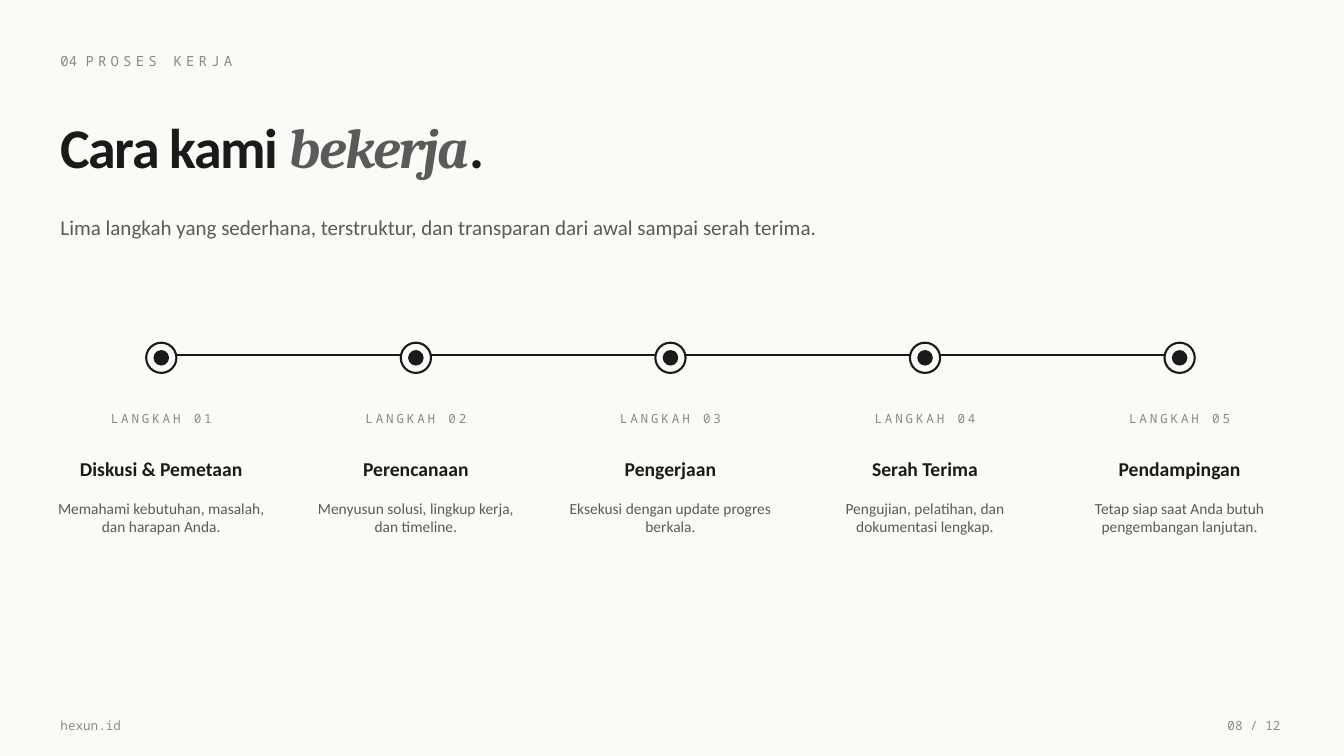
"""Build the work process slide with its five-step timeline."""
import pptx
import pptx.dml.color
import pptx.enum.shapes
import pptx.enum.text
import pptx.oxml.ns
import pptx.util
from dataclasses import dataclass
from lxml import etree

Inches = pptx.util.Inches
Align = pptx.enum.text.PP_ALIGN
Anchor = pptx.enum.text.MSO_ANCHOR
Preset = pptx.enum.shapes.MSO_SHAPE

SECTION = ("04 ", "PROSES KERJA")
TITLE = ("Cara kami ", "bekerja", ".")
SUBTITLE = "Lima langkah yang sederhana, terstruktur, dan transparan dari awal sampai serah terima."
STEPS = [
    ("Diskusi & Pemetaan", "Memahami kebutuhan, masalah, dan harapan Anda."),
    ("Perencanaan", "Menyusun solusi, lingkup kerja, dan timeline."),
    ("Pengerjaan", "Eksekusi dengan update progres berkala."),
    ("Serah Terima", "Pengujian, pelatihan, dan dokumentasi lengkap."),
    ("Pendampingan", "Tetap siap saat Anda butuh pengembangan lanjutan."),
]
SITE = "hexun.id"
PAGE = "08 / 12"


@dataclass(frozen=True)
class Style:
    font: str
    size: float
    color: str
    bold: bool = False
    italic: bool = False
    spacing: float = 0


class Theme:
    paper, ink, gray, muted = "FAFAF7", "1A1A1A", "5A5A5A", "8A8A8A"
    sans, serif, mono = "Calibri", "Cambria", "Noto Sans Mono"
    number = Style(mono, 10, muted)
    section = Style(mono, 10, muted, spacing=3)
    title = Style(sans, 40, ink, bold=True, spacing=-1)
    accent = Style(serif, 40, gray, bold=True, italic=True, spacing=-1)
    subtitle = Style(sans, 15, gray)
    step = Style(mono, 9, muted, spacing=2)
    heading = Style(sans, 14, ink, bold=True)
    detail = Style(sans, 11, gray)
    footer = Style(mono, 9, muted)


MARGIN = 0.6
TRACK_LEFT, TRACK_WIDTH, TRACK_TOP = 1.6, 10.1, 3.52
MARKER_CENTER = 3.55


def rgb(color):
    return pptx.dml.color.RGBColor.from_string(color)


def write(shape, pieces, align=Align.LEFT, anchor=Anchor.MIDDLE):
    frame = shape.text_frame
    frame.word_wrap = True
    frame.auto_size = pptx.enum.text.MSO_AUTO_SIZE.NONE
    frame.vertical_anchor = anchor
    frame.margin_left = frame.margin_top = frame.margin_right = frame.margin_bottom = 0
    paragraph = frame.paragraphs[0]
    paragraph.alignment = align
    for text, style in pieces:
        run = paragraph.add_run()
        run.text = text
        run.font.name = style.font
        run.font.size = pptx.util.Pt(style.size)
        run.font.bold = style.bold
        run.font.italic = style.italic
        run.font.color.rgb = rgb(style.color)
        if style.spacing:
            run.font._element.set("spc", str(int(style.spacing * 100)))


def add_text(slide, box, pieces, **layout):
    write(slide.shapes.add_textbox(*map(Inches, box)), pieces, **layout)


def add_mark(slide, preset, box, fill, line_width):
    shape = slide.shapes.add_shape(preset, *map(Inches, box))
    shape.shadow.inherit = False
    shape.fill.solid()
    shape.fill.fore_color.rgb = rgb(fill)
    shape.line.color.rgb = rgb(Theme.ink)
    shape.line.width = pptx.util.Pt(line_width)
    return shape


def add_track(slide):
    box = (TRACK_LEFT, TRACK_TOP, TRACK_WIDTH, 0.01)
    track = add_mark(slide, Preset.RECTANGLE, box, Theme.ink, 1)
    qn = pptx.oxml.ns.qn
    color = track.element.spPr.find(qn("a:solidFill")).find(qn("a:srgbClr"))
    etree.SubElement(color, qn("a:alpha"), val="30000")


def add_step(slide, index, heading, detail):
    center = TRACK_LEFT + index * TRACK_WIDTH / (len(STEPS) - 1)
    for size, fill, line_width in ((0.3, Theme.paper, 1.5), (0.14, Theme.ink, 1)):
        box = (center - size / 2, MARKER_CENTER - size / 2, size, size)
        add_mark(slide, Preset.OVAL, box, fill, line_width)
    rows = [
        (f"LANGKAH {index + 1:02d}", Theme.step, 4, 1.9, 0.3, Anchor.MIDDLE),
        (heading, Theme.heading, 4.4, 2, 0.5, Anchor.MIDDLE),
        (detail, Theme.detail, 4.95, 2.1, 1.2, Anchor.TOP),
    ]
    for text, style, top, width, height, anchor in rows:
        box = (center - width / 2, top, width, height)
        add_text(slide, box, [(text, style)], align=Align.CENTER, anchor=anchor)


def main():
    presentation = pptx.Presentation()
    presentation.slide_width = Inches(13.33)
    presentation.slide_height = Inches(7.5)
    slide = presentation.slides.add_slide(presentation.slide_layouts.get_by_name("Title Only"))
    slide.background.fill.solid()
    slide.background.fill.fore_color.rgb = rgb(Theme.paper)

    title = slide.shapes.title
    title.left, title.top, title.width, title.height = map(Inches, (MARGIN, 1, 9, 0.9))
    write(title, zip(TITLE, (Theme.title, Theme.accent, Theme.title)))
    add_text(slide, (MARGIN, 0.45, 8, 0.3), zip(SECTION, (Theme.number, Theme.section)))
    add_text(slide, (MARGIN, 2, 10, 0.5), [(SUBTITLE, Theme.subtitle)])

    add_track(slide)
    for index, (heading, detail) in enumerate(STEPS):
        add_step(slide, index, heading, detail)

    add_text(slide, (MARGIN, 7.05, 2, 0.3), [(SITE, Theme.footer)])
    add_text(slide, (11.9, 7.05, 0.8, 0.3), [(PAGE, Theme.footer)], align=Align.RIGHT)
    presentation.save("out.pptx")


if __name__ == "__main__":
    main()
